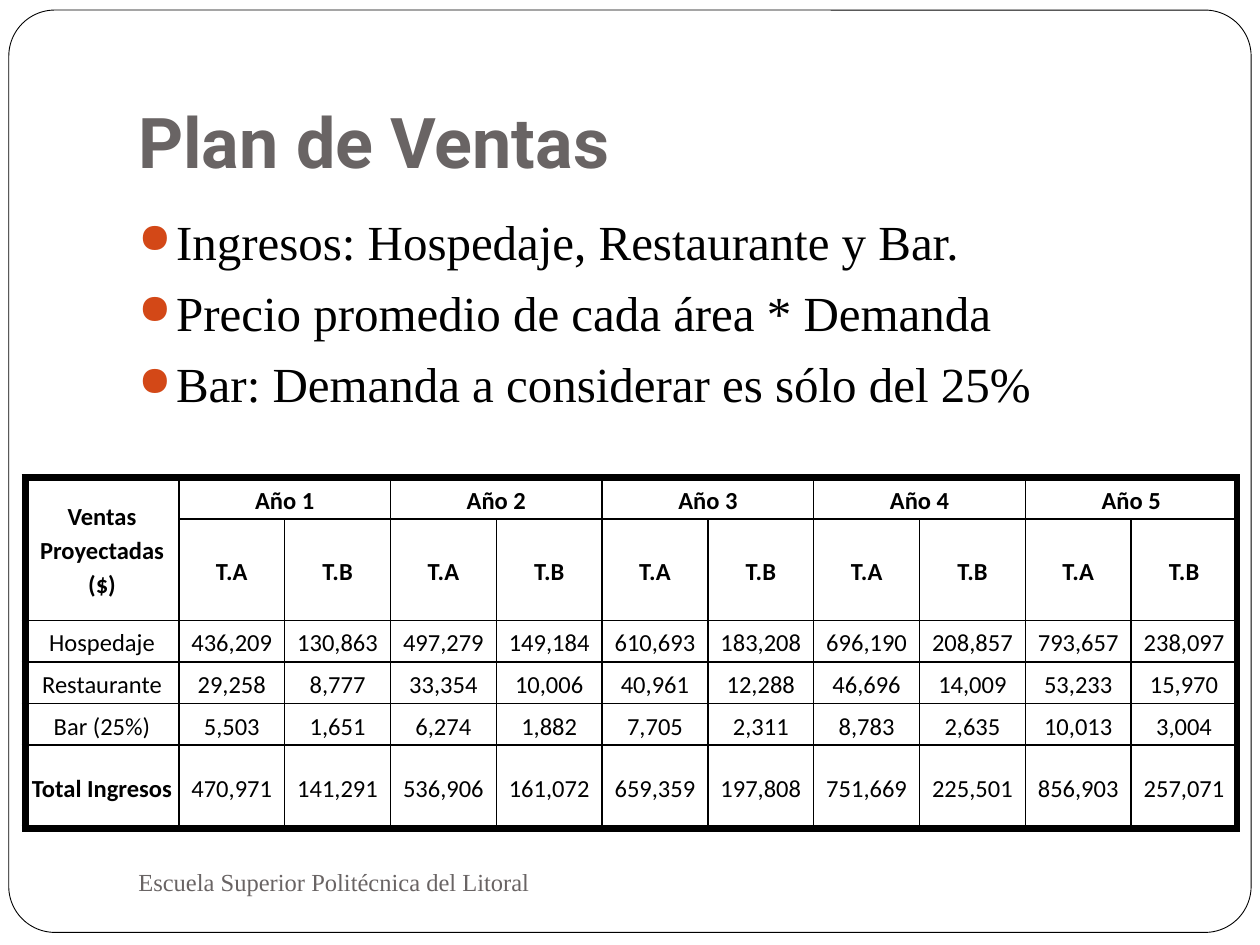
from lxml.etree import SubElement
from pptx import Presentation
from pptx.dml.color import RGBColor
from pptx.enum.shapes import MSO_SHAPE
from pptx.enum.text import MSO_ANCHOR, PP_ALIGN
from pptx.oxml.ns import qn
from pptx.util import Inches, Pt


def color(code):
    return RGBColor.from_string(code)


def write(frame, *lines, font="Times New Roman", size=14, ink="000000", bold=False,
          align=PP_ALIGN.LEFT, spacing=None, before=0, bullet=None):
    """Fill a text frame with one paragraph a line; bullet is a color or None."""
    frame.word_wrap = True
    for i, line in enumerate(lines):
        para = frame.paragraphs[0] if i == 0 else frame.add_paragraph()
        para.alignment = align
        para.line_spacing = spacing
        if i:
            para.space_before = Pt(before)
        if bullet:
            props = para._p.get_or_add_pPr()
            props.set("marL", str(Inches(0.3)))
            props.set("indent", str(-Inches(0.3)))
            tint = SubElement(props, qn("a:buClr"))
            SubElement(tint, qn("a:srgbClr"), val=bullet)
            SubElement(props, qn("a:buSzPct"), val="85000")
            SubElement(props, qn("a:buChar"), char="●")
        run = para.add_run()
        run.text = line
        run.font.name, run.font.size, run.font.bold = font, Pt(size), bold
        run.font.color.rgb = color(ink)


deck = Presentation()
deck.slide_width, deck.slide_height = Inches(10), Inches(7.5)
slide = deck.slides.add_slide(deck.slide_layouts[6])
shapes = slide.shapes

border = shapes.add_shape(MSO_SHAPE.ROUNDED_RECTANGLE, Inches(0.07), Inches(0.08),
                          Inches(9.86), Inches(7.32))
border.adjustments[0] = 0.05
border.shadow.inherit = False
border.fill.solid()
border.fill.fore_color.rgb = color("FFFFFF")
border.line.color.rgb = color("000000")
border.line.width = Pt(0.5)

title = shapes.add_textbox(Inches(1), Inches(0.3), Inches(8.5), Inches(1.25)).text_frame
title.vertical_anchor = MSO_ANCHOR.BOTTOM
title.margin_bottom = Inches(0.1)
write(title, "Plan de Ventas", font="Roboto", size=40, ink="696464", bold=True)

footer = shapes.add_textbox(Inches(1), Inches(6.75), Inches(4.33), Inches(0.5)).text_frame
footer.vertical_anchor = MSO_ANCHOR.MIDDLE
write(footer, "Escuela Superior Politécnica del Litoral", ink="696464")

body = shapes.add_textbox(Inches(1), Inches(1.63), Inches(8.5), Inches(1.69)).text_frame
write(body, "Ingresos: Hospedaje, Restaurante y Bar.", "Precio promedio de cada área * Demanda",
      "Bar: Demanda a considerar es sólo del 25%", size=28, before=7, bullet="D34817")

years = [f"Año {n}" for n in range(1, 6)]
rows = [
    ["Ventas Proyectadas ($)"] + [text for year in years for text in (year, "")],
    [""] + ["T.A", "T.B"] * len(years),
    ["Hospedaje", "436,209", "130,863", "497,279", "149,184", "610,693",
     "183,208", "696,190", "208,857", "793,657", "238,097"],
    ["Restaurante", "29,258", "8,777", "33,354", "10,006", "40,961",
     "12,288", "46,696", "14,009", "53,233", "15,970"],
    ["Bar (25%)", "5,503", "1,651", "6,274", "1,882", "7,705",
     "2,311", "8,783", "2,635", "10,013", "3,004"],
    ["Total Ingresos", "470,971", "141,291", "536,906", "161,072", "659,359",
     "197,808", "751,669", "225,501", "856,903", "257,071"],
]
high, wide = len(rows), len(rows[0])
table = shapes.add_table(high, wide, Inches(0.2), Inches(3.79),
                         Inches(9.62), Inches(2.64)).table
table.first_row = table.horz_banding = False
for i, col in enumerate(table.columns):
    col.width = Inches(0.84 if i else 1.22)
for i, row in enumerate(table.rows):
    row.height = Inches(0.66 if i in (1, high - 1) else 0.33)

table.cell(0, 0).merge(table.cell(1, 0))
for c in range(1, wide, 2):
    table.cell(0, c).merge(table.cell(0, c + 1))

for r, row in enumerate(rows):
    for c, text in enumerate(row):
        cell = table.cell(r, c)
        if cell.is_spanned:
            continue
        cell.vertical_anchor = MSO_ANCHOR.MIDDLE
        cell.margin_left = cell.margin_right = Inches(0.04)
        cell.margin_top = cell.margin_bottom = 0
        write(cell.text_frame, text, font="Calibri", bold=r < 2 or text == "Total Ingresos",
              align=PP_ALIGN.CENTER, spacing=1.15)
        props = cell._tc.get_or_add_tcPr()
        outer = {"L": c == 0, "R": c + cell.span_width >= wide if cell.is_merge_origin
                 else c == wide - 1, "T": r == 0, "B": r == high - 1}
        for side, edge in outer.items():
            line = SubElement(props, qn(f"a:ln{side}"), w=str(Pt(4.5 if edge else 1)))
            fill = SubElement(line, qn("a:solidFill"))
            SubElement(fill, qn("a:srgbClr"), val="000000")
        cell.fill.background()

deck.save("out.pptx")
